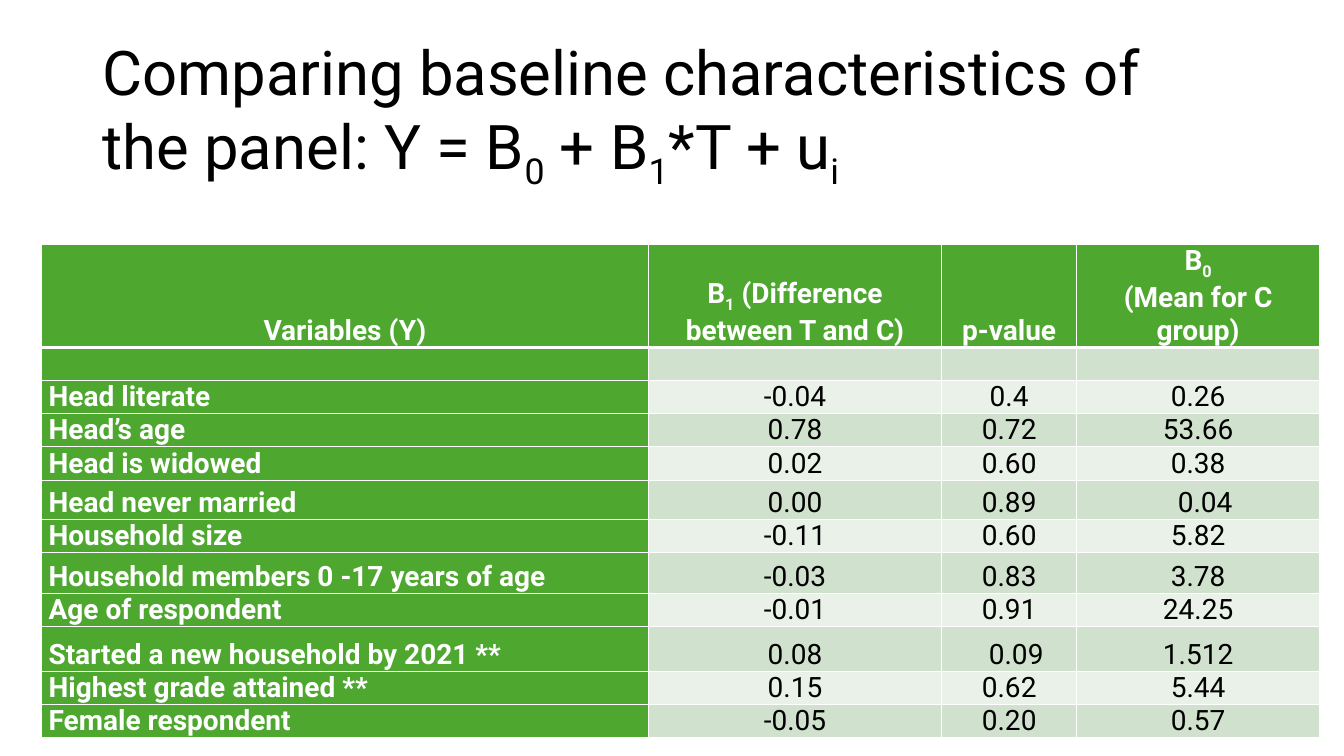
"""Build a slide that compares baseline characteristics in a regression table."""
from dataclasses import dataclass

from lxml import etree
from pptx import Presentation
from pptx import util as u
from pptx.dml.color import RGBColor
from pptx.enum import text
from pptx.oxml import ns

FONT = "Roboto"
BLACK = RGBColor(0x00, 0x00, 0x00)
WHITE = RGBColor(0xFF, 0xFF, 0xFF)
GREEN = RGBColor(0x4E, 0xA7, 0x2E)
BANDS = (RGBColor(0xE9, 0xF1, 0xE8), RGBColor(0xD0, 0xE1, 0xCD))
LEFT = text.PP_ALIGN.LEFT
CENTER = text.PP_ALIGN.CENTER
INSET = 5
HEADER_HEIGHT = 73
ROW_HEIGHT = 23.5
COLUMN_WIDTHS = (433.44, 209.52, 96.48, 173.52)


@dataclass(frozen=True)
class Run:
    text: str
    subscript: bool = False


@dataclass(frozen=True)
class Variable:
    name: str = ""
    values: tuple[str, str, str] = ("", "", "")
    height: float = ROW_HEIGHT
    shifted_column: int = 0


TITLE = (
    Run("Comparing baseline characteristics of the panel: Y = B"),
    Run("0", True),
    Run(" + B"),
    Run("1", True),
    Run("*T + u"),
    Run("i", True),
)
HEADERS = (
    ((Run("Variables (Y)"),),),
    ((Run("B"), Run("1", True), Run(" (Difference between T and C)")),),
    ((Run("p-value"),),),
    ((Run("B"), Run("0", True)), (Run("(Mean for C group)"),)),
)
VARIABLES = (
    Variable(),
    Variable("Head literate", ("-0.04", "0.4", "0.26")),
    Variable("Head’s age", ("0.78", "0.72", "53.66")),
    Variable("Head is widowed", ("0.02", "0.60", "0.38"), 24.3),
    Variable("Head never married", ("0.00", "0.89", "0.04"), 27.8, 3),
    Variable("Household size", ("-0.11", "0.60", "5.82")),
    Variable("Household members 0 -17 years of age", ("-0.03", "0.83", "3.78"), 29.5),
    Variable("Age of respondent", ("-0.01", "0.91", "24.25")),
    Variable("Started a new household by 2021 **", ("0.08", "0.09", "1.512"), 32.2, 2),
    Variable("Highest grade attained **", ("0.15", "0.62", "5.44")),
    Variable("Female respondent", ("-0.05", "0.20", "0.57")),
)


def add_runs(paragraph, runs: tuple[Run, ...], size: float, color: RGBColor, bold: bool) -> None:
    for item in runs:
        run = paragraph.add_run()
        run.text = item.text
        run.font.name = FONT
        run.font.size = u.Pt(size)
        run.font.bold = bold
        run.font.color.rgb = color
        if item.subscript:
            run._r.get_or_add_rPr().set("baseline", "-25000")


def add_borders(cell, top: float, bottom: float) -> None:
    properties = cell._tc.get_or_add_tcPr()
    for side, width in (("L", 1), ("R", 1), ("T", top), ("B", bottom)):
        line = etree.SubElement(properties, ns.qn(f"a:ln{side}"), w=str(u.Pt(width)))
        fill = etree.SubElement(line, ns.qn("a:solidFill"))
        etree.SubElement(fill, ns.qn("a:srgbClr"), val=str(WHITE))


def format_cell(cell, row: int, column: int, shift: float = 0) -> None:
    add_borders(cell, 3 if row == 1 else 1, 3 if row == 0 else 1)
    cell.fill.solid()
    cell.fill.fore_color.rgb = GREEN if row == 0 or column == 0 else BANDS[row % 2]
    cell.vertical_anchor = text.MSO_ANCHOR.BOTTOM
    cell.margin_left, cell.margin_right = u.Pt(INSET + shift), u.Pt(INSET)
    cell.margin_top = cell.margin_bottom = 0


def add_title(slide) -> None:
    title = slide.shapes.title
    title.left, title.top, title.width, title.height = map(u.Pt, (66, 28.8, 828, 104.4))
    frame = title.text_frame
    frame.word_wrap = True
    frame.auto_size = text.MSO_AUTO_SIZE.NONE
    frame.vertical_anchor = text.MSO_ANCHOR.MIDDLE
    paragraph = frame.paragraphs[0]
    paragraph.alignment = LEFT
    paragraph.line_spacing = 0.9
    add_runs(paragraph, TITLE, 44, BLACK, False)


def add_comparison_table(slide) -> None:
    heights = [HEADER_HEIGHT] + [variable.height for variable in VARIABLES]
    table = slide.shapes.add_table(
        len(heights), len(COLUMN_WIDTHS), u.Pt(29.7), u.Pt(174.6),
        u.Pt(sum(COLUMN_WIDTHS)), u.Pt(sum(heights)),
    ).table
    for column, width in zip(table.columns, COLUMN_WIDTHS):
        column.width = u.Pt(width)
    for row, height in zip(table.rows, heights):
        row.height = u.Pt(height)

    for column, paragraphs in enumerate(HEADERS):
        cell = table.cell(0, column)
        format_cell(cell, 0, column)
        for index, runs in enumerate(paragraphs):
            frame = cell.text_frame
            paragraph = frame.add_paragraph() if index else frame.paragraphs[0]
            paragraph.alignment = CENTER
            add_runs(paragraph, runs, 20, WHITE, True)

    for row, variable in enumerate(VARIABLES, start=1):
        for column, content in enumerate((variable.name, *variable.values)):
            cell = table.cell(row, column)
            is_name = column == 0
            is_shifted = not is_name and column == variable.shifted_column
            format_cell(cell, row, column, 10 if is_shifted else 0)
            if content:
                paragraph = cell.text_frame.paragraphs[0]
                paragraph.alignment = LEFT if is_name else CENTER
                add_runs(paragraph, (Run(content),), 20, WHITE if is_name else BLACK, is_name)


def main() -> None:
    presentation = Presentation()
    presentation.slide_width, presentation.slide_height = u.Pt(960), u.Pt(540)
    slide = presentation.slides.add_slide(presentation.slide_layouts[5])
    add_title(slide)
    add_comparison_table(slide)
    presentation.save("out.pptx")


if __name__ == "__main__":
    main()
